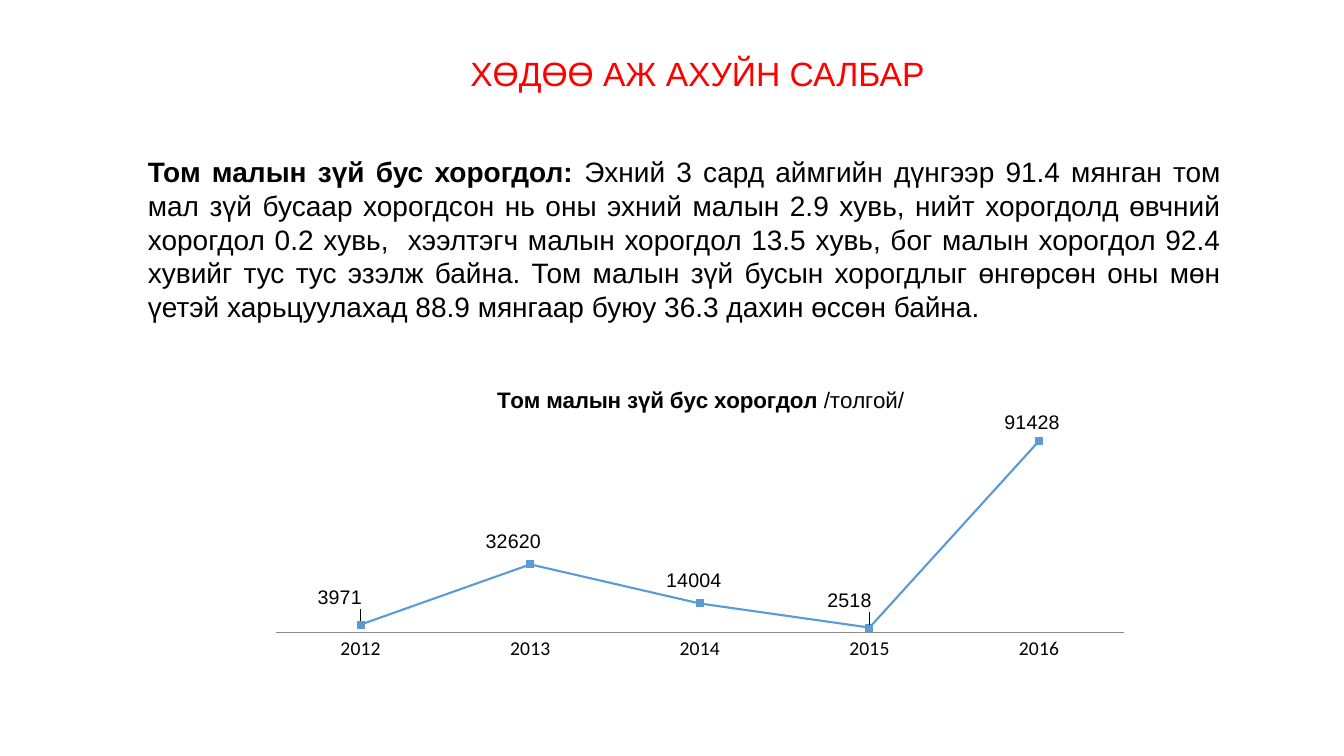
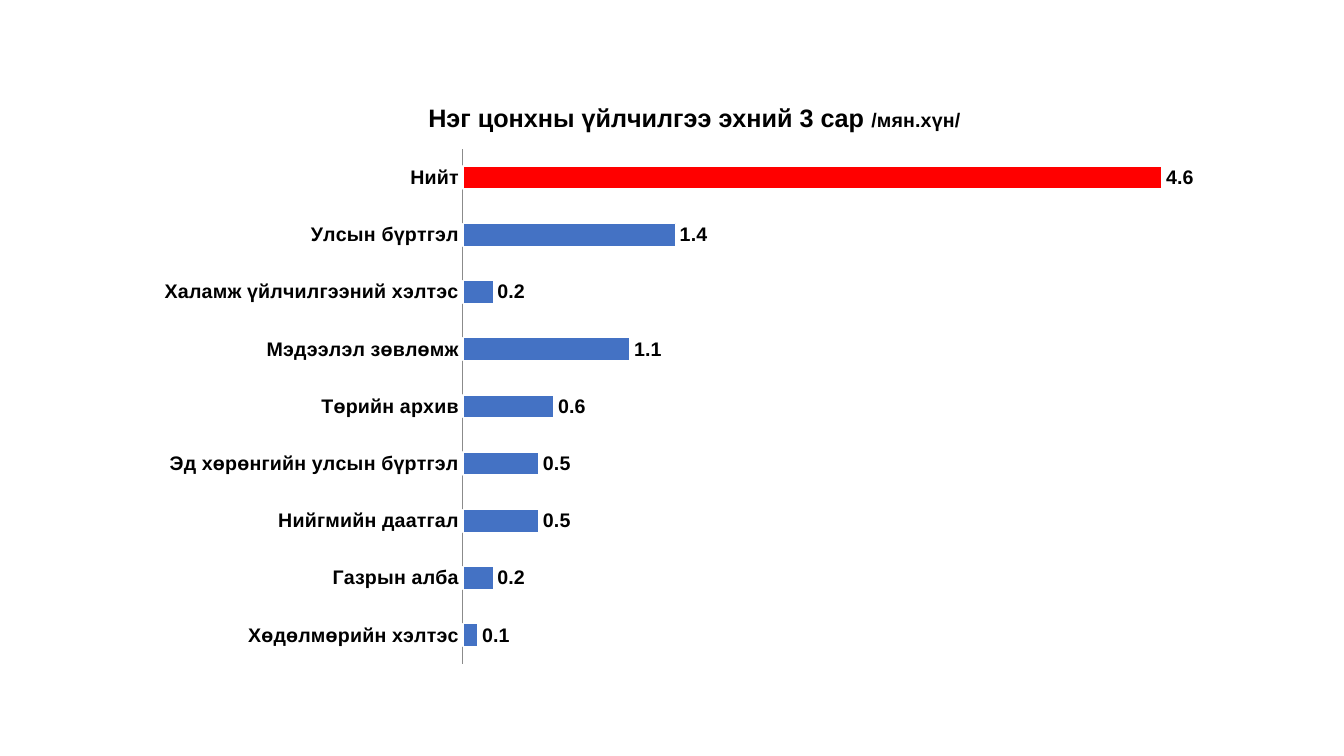
from lxml import etree
from pptx import Presentation
from pptx import util as u
from pptx.chart import data as chart_data
from pptx.dml import color
from pptx.enum import chart as ce
from pptx.enum import text
from pptx.oxml import ns

PX = 914400 / 100.8
COLORS = {
    "white": "FFFFFF",
    "text": "000000",
    "accent": "FF0000",
    "line": "5B9BD5",
    "bar": "4472C4",
    "axis": "8B8B8B",
}


def px(value):
    return u.Emu(round(value * PX))


class Deck:
    def __init__(self):
        self.presentation = Presentation()
        self.presentation.slide_width = px(1344)
        self.presentation.slide_height = px(756)
        self.slide = None

    def add_slide(self):
        self.slide = self.presentation.slides.add_slide(self.presentation.slide_layouts[6])
        self.fill(self.slide.background, "white")

    def fill(self, target, name):
        target.fill.solid()
        target.fill.fore_color.rgb = color.RGBColor.from_string(COLORS[name])

    def line(self, line, name, width):
        line.color.rgb = color.RGBColor.from_string(COLORS[name])
        line.width = u.Pt(width)

    def font(self, font, size, bold=False, name="Arial", shade="text"):
        font.name = name
        font.size = u.Pt(size)
        font.bold = bold
        font.color.rgb = color.RGBColor.from_string(COLORS[shade])

    def runs(self, paragraph, parts, shade="text"):
        for wording, size, bold in parts:
            run = paragraph.add_run()
            run.text = wording
            self.font(run.font, size, bold, shade=shade)

    def text(self, box, parts, align, anchor=text.MSO_ANCHOR.TOP, shade="text"):
        shape = self.slide.shapes.add_textbox(*map(px, box))
        frame = shape.text_frame
        frame.word_wrap = True
        frame.vertical_anchor = anchor
        paragraph = frame.paragraphs[0]
        paragraph.alignment = align
        self.runs(paragraph, parts, shade)

    def title(self, wording):
        self.text((269, 30, 857, 86), [(wording, 24, False)], text.PP_ALIGN.CENTER,
                  text.MSO_ANCHOR.MIDDLE, "accent")

    def layout(self, parent, index, values, inner=False):
        for old in parent.findall(ns.qn("c:layout")):
            parent.remove(old)
        layout = etree.Element(ns.qn("c:layout"))
        manual = etree.SubElement(layout, ns.qn("c:manualLayout"))
        settings = [("layoutTarget", "inner"), ("xMode", "edge"), ("yMode", "edge")] if inner else []
        for tag, value in settings + list(zip("xywh", values)):
            etree.SubElement(manual, ns.qn("c:" + tag)).set("val", str(value))
        parent.insert(index, layout)

    def chart(self, kind, box, plot_box, title_parts, categories, values, maximum,
              number_format="General"):
        data = chart_data.CategoryChartData(number_format=number_format)
        data.categories = categories
        data.add_series("Series 1", values)
        chart = self.slide.shapes.add_chart(kind, *map(px, box), data).chart
        self.font(chart.font, 10, name="Calibri")
        chart.has_legend = False
        chart.has_title = True
        self.runs(chart.chart_title.text_frame.paragraphs[0], title_parts)
        chart.chart_title.include_in_layout = False

        value_axis = chart.value_axis
        value_axis.visible = False
        value_axis.has_major_gridlines = False
        value_axis.minimum_scale = 0
        value_axis.maximum_scale = maximum
        category_axis = chart.category_axis
        category_axis.has_major_gridlines = False
        category_axis.major_tick_mark = ce.XL_TICK_MARK.NONE
        self.line(category_axis.format.line, "axis", 0.75)

        left, top, width, height = box
        x, y, w, h = plot_box
        fractions = ((x - left) / width, (y - top) / height, w / width, h / height)
        plot = chart.plots[0]
        plot.vary_by_categories = False
        self.layout(chart.element.chart.plotArea if hasattr(chart, "element")
                    else chart._chartSpace.chart.plotArea, 0, fractions, inner=True)
        return chart, plot, plot.series[0]

    def line_chart(self, box, plot_box, title_parts, categories, values, maximum, label_shifts):
        chart, plot, series = self.chart(ce.XL_CHART_TYPE.LINE_MARKERS, box, plot_box,
                                         title_parts, categories, values, maximum)
        self.font(chart.category_axis.tick_labels.font, 14, name="Calibri")
        series.smooth = False
        self.line(series.format.line, "line", 1.5)
        series.marker.style = ce.XL_MARKER_STYLE.SQUARE
        series.marker.size = 5
        self.fill(series.marker.format, "line")
        self.line(series.marker.format.line, "line", 0.75)
        for index in range(len(values)):
            label = series.points[index].data_label
            self.font(label.font, 14)
            label.position = ce.XL_LABEL_POSITION.ABOVE
        labels = series._element.findall(".//" + ns.qn("c:dLbl"))
        for label, (x, y) in zip(labels, label_shifts):
            self.layout(label, 1, (x / box[2], y / box[3]))

    def bar_chart(self, box, plot_box, title_parts, categories, values, maximum, highlight):
        chart, plot, series = self.chart(ce.XL_CHART_TYPE.BAR_CLUSTERED, box, plot_box,
                                         title_parts, categories, values, maximum, "0.0")
        self.font(chart.category_axis.tick_labels.font, 14, True)
        plot.gap_width = 150
        plot.overlap = -25
        series.invert_if_negative = False
        for target, name in ((series, "bar"), (series.points[highlight], "accent")):
            self.fill(target.format, name)
            self.line(target.format.line, "white", 1)
        plot.has_data_labels = True
        labels = plot.data_labels
        labels.show_value = True
        labels.number_format = "0.0"
        labels.number_format_is_linked = False
        labels.position = ce.XL_LABEL_POSITION.OUTSIDE_END
        self.font(labels.font, 14, True)


def main():
    deck = Deck()

    deck.add_slide()
    deck.title("ХӨДӨӨ АЖ АХУЙН САЛБАР")
    deck.text(
        (138, 150, 1093, 180),
        [
            ("Том малын зүй бус хорогдол: ", 20, True),
            ("Эхний 3 сард аймгийн дүнгээр 91.4 мянган том мал зүй бусаар хорогдсон нь оны "
             "эхний малын 2.9 хувь, нийт хорогдолд өвчний хорогдол 0.2 хувь,  хээлтэгч малын "
             "хорогдол 13.5 хувь, бог малын хорогдол 92.4 хувийг тус тус эзэлж байна. Том малын "
             "зүй бусын хорогдлыг өнгөрсөн оны мөн үетэй харьцуулахад 88.9 мянгаар буюу 36.3 "
             "дахин өссөн байна.", 20, False),
        ],
        text.PP_ALIGN.JUSTIFY,
    )
    deck.line_chart(
        (259, 372, 883, 296),
        (276, 423, 848, 210),
        [("Том малын зүй бус хорогдол ", 16, True), ("/толгой/", 16, False)],
        ["2012", "2013", "2014", "2015", "2016"],
        [3971, 32620, 14004, 2518, 91428],
        100000,
        [(-21, -8), (-17, -4), (-6, -4), (-20, -8), (-7, 0)],
    )

    deck.add_slide()
    services = {
        "Хөдөлмөрийн хэлтэс": 0.1,
        "Газрын алба": 0.2,
        "Нийгмийн даатгал": 0.5,
        "Эд хөрөнгийн улсын бүртгэл": 0.5,
        "Төрийн архив": 0.6,
        "Мэдээлэл зөвлөмж": 1.1,
        "Халамж үйлчилгээний хэлтэс": 0.2,
        "Улсын бүртгэл": 1.4,
        "Нийт": 4.6,
    }
    deck.bar_chart(
        (143, 82, 1103, 595),
        (463, 149, 760, 515),
        [("Нэг цонхны үйлчилгээ эхний 3 сар ", 18, True), ("/мян.хүн/", 14, True)],
        list(services),
        list(services.values()),
        5,
        len(services) - 1,
    )

    deck.presentation.save("out.pptx")


if __name__ == "__main__":
    main()
